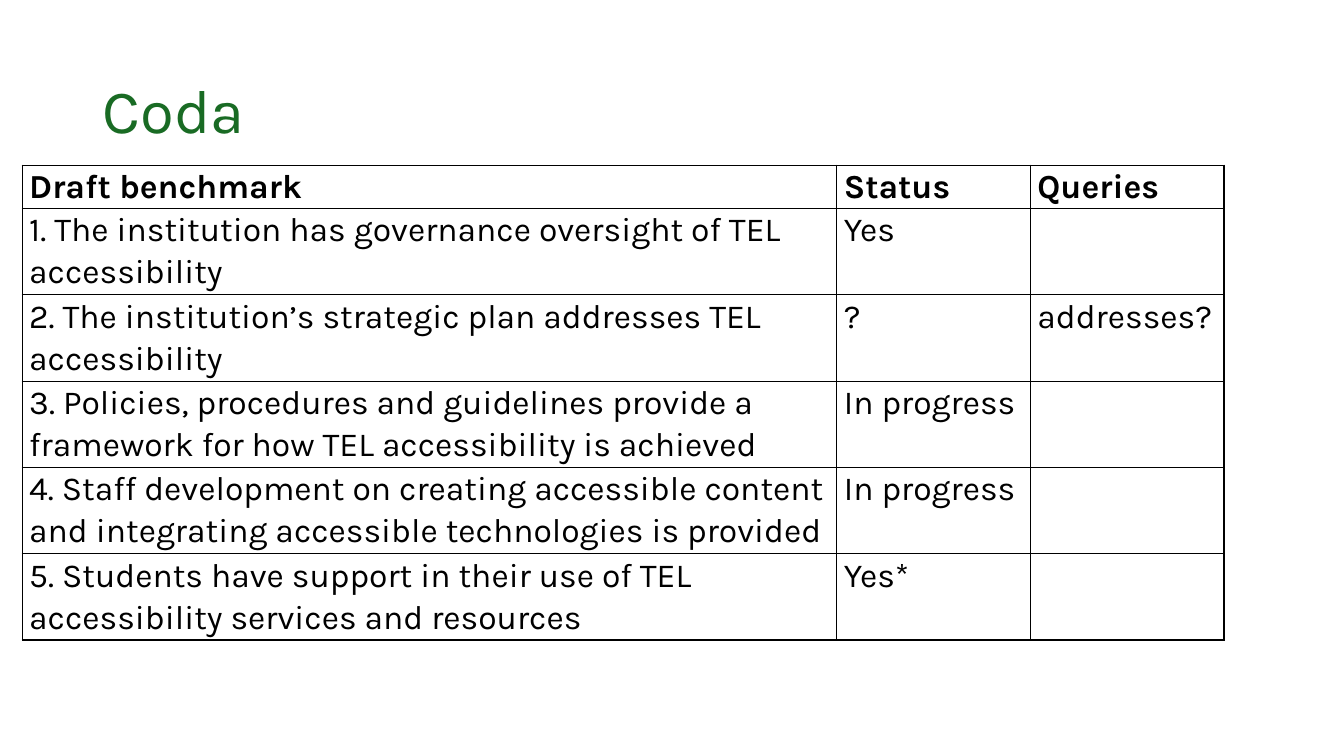
from lxml import etree
from pptx import Presentation
from pptx import util as u
from pptx.dml.color import RGBColor
from pptx.enum import text
from pptx.oxml import ns

COLORS = {"title": "196B24", "ink": "000000"}
BENCHMARKS = [
    ("Draft benchmark", "Status", "Queries"),
    ("1. The institution has governance oversight of TEL accessibility", "Yes", ""),
    ("2. The institution’s strategic plan addresses TEL accessibility", "?", "addresses?"),
    ("3. Policies, procedures and guidelines provide a framework for how TEL "
     "accessibility is achieved", "In progress", ""),
    ("4. Staff development on creating accessible content and integrating "
     "accessible technologies is provided", "In progress", ""),
    ("5. Students have support in their use of TEL accessibility services and "
     "resources", "Yes*", ""),
]
COLUMN_WIDTHS = [8.08, 1.92, 1.92]
HEADER_HEIGHT, ROW_HEIGHT = 0.41, 0.84


def style_paragraph(para, size, color, spacing, bold=False):
    para.line_spacing = spacing
    para.font.name = "Karla"
    para.font.size = u.Pt(size)
    para.font.bold = bold
    para.font.color.rgb = RGBColor.from_string(COLORS[color])


def add_borders(cell, color):
    properties = cell._tc.get_or_add_tcPr()
    for position, side in enumerate(("lnL", "lnR", "lnT", "lnB")):
        line = etree.Element(ns.qn(f"a:{side}"), w=str(u.Pt(1)))
        fill = etree.SubElement(line, ns.qn("a:solidFill"))
        etree.SubElement(fill, ns.qn("a:srgbClr"), val=COLORS[color])
        properties.insert(position, line)


deck = Presentation()
deck.slide_width, deck.slide_height = u.Inches(13.33), u.Inches(7.5)
page = deck.slides.add_slide(deck.slide_layouts[6])

# Title
box = page.shapes.add_textbox(u.Inches(0.92), u.Inches(0.4), u.Inches(11.5), u.Inches(1.45))
frame = box.text_frame
frame.word_wrap = True
frame.vertical_anchor = text.MSO_ANCHOR.MIDDLE
frame.text = "Coda"
style_paragraph(frame.paragraphs[0], 44, "title", 0.9)

# Benchmark table
table = page.shapes.add_table(
    len(BENCHMARKS), len(COLUMN_WIDTHS), u.Inches(0.22), u.Inches(1.64),
    u.Inches(sum(COLUMN_WIDTHS)),
    u.Inches(HEADER_HEIGHT + ROW_HEIGHT * (len(BENCHMARKS) - 1))).table
table.horz_banding = False
for column, width in zip(table.columns, COLUMN_WIDTHS):
    column.width = u.Inches(width)

for row_index, entries in enumerate(BENCHMARKS):
    is_header = row_index == 0
    table.rows[row_index].height = u.Inches(HEADER_HEIGHT if is_header else ROW_HEIGHT)
    for column_index, entry in enumerate(entries):
        cell = table.cell(row_index, column_index)
        cell.fill.background()
        cell.margin_left = cell.margin_right = u.Inches(0.07)
        cell.margin_top = cell.margin_bottom = 0
        add_borders(cell, "ink")
        para = cell.text_frame.paragraphs[0]
        if entry:
            para.text = entry
        para.space_after = u.Pt(8)
        style_paragraph(para, 24, "ink", 1.07, bold=is_header)

deck.save("out.pptx")
